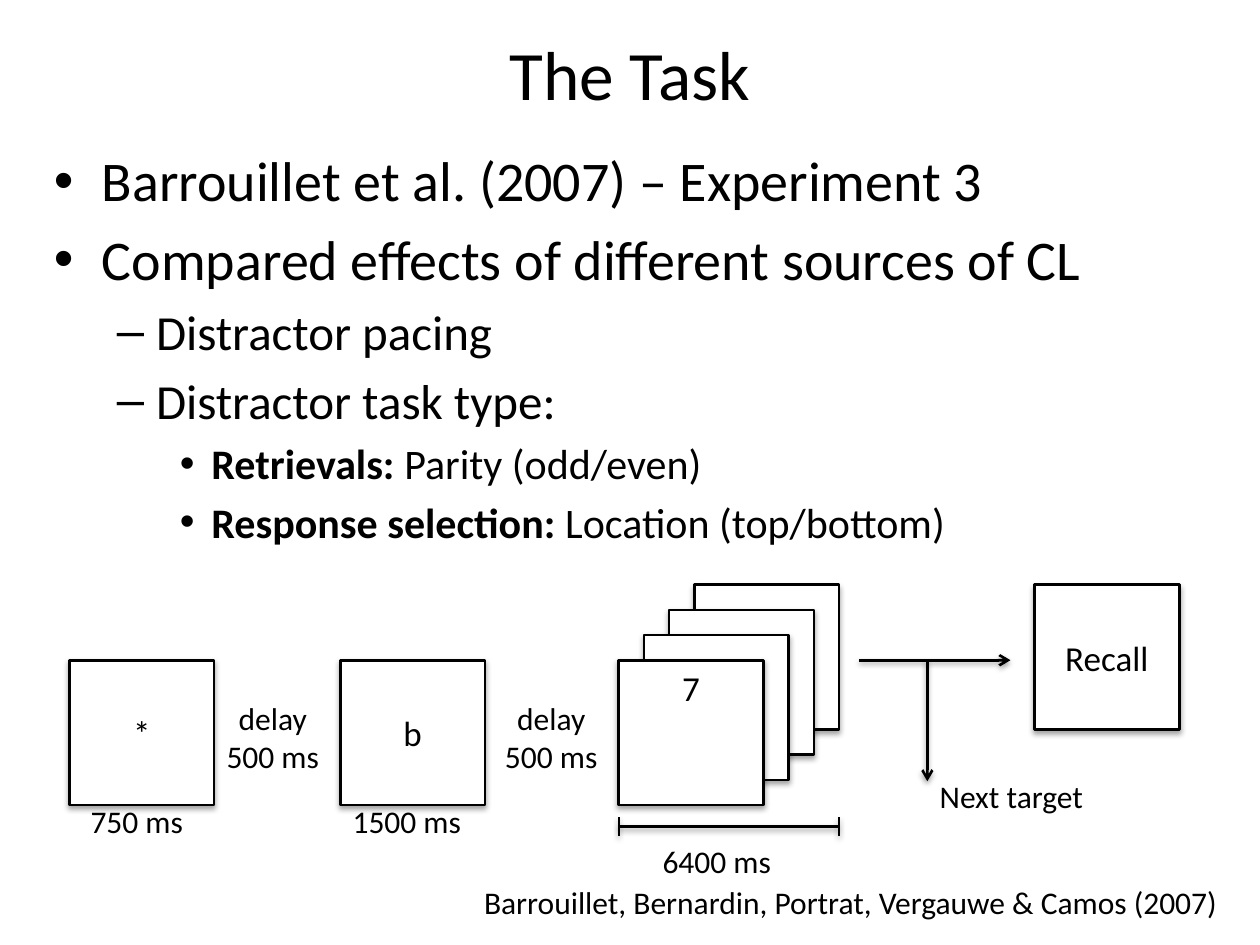
"""Build the slide that explains the distractor task."""

from dataclasses import dataclass

from lxml.etree import SubElement
from pptx import Presentation
from pptx.dml.color import RGBColor
from pptx.enum.shapes import MSO_CONNECTOR, MSO_SHAPE
from pptx.enum.text import MSO_ANCHOR, PP_ALIGN
from pptx.oxml.ns import qn
from pptx.shapes.autoshape import Shape
from pptx.slide import Slide
from pptx.text.text import TextFrame, _Paragraph
from pptx.util import Emu, Inches, Pt

COLUMNS, ROWS = 100, 75
WIDTH, HEIGHT = Inches(10), Inches(7.5)


@dataclass(frozen=True)
class Theme:
    """Colours, type sizes and line widths of the slide."""

    font: str = "Calibri"
    ink: RGBColor = RGBColor(0, 0, 0)
    paper: RGBColor = RGBColor(255, 255, 255)
    title: float = 39.6
    levels: tuple[int, ...] = (32, 28, 24)
    card: int = 20
    label: int = 18
    stroke: float = 1.5
    thin: float = 1


@dataclass(frozen=True)
class Level:
    """Bullet character and indents, in columns, of an outline level."""

    bullet: str
    margin: float
    hanging: float


@dataclass(frozen=True)
class Point:
    """One outline entry with an optional bold lead."""

    level: int
    text: str
    lead: str = ""


@dataclass(frozen=True)
class Card:
    """One screen of the task, placed by its top left corner."""

    column: float
    row: float
    text: str = ""
    anchor: MSO_ANCHOR = MSO_ANCHOR.MIDDLE


@dataclass(frozen=True)
class Label:
    """A text area on the grid."""

    column: float
    row: float
    columns: float
    rows: float
    lines: tuple[str, ...]
    size: float
    align: PP_ALIGN = PP_ALIGN.LEFT


@dataclass(frozen=True)
class Rule:
    """A straight line between two grid points."""

    start: tuple[float, float]
    end: tuple[float, float]
    width: float
    arrow: bool = False


THEME = Theme()
SIDE = 11.5
BASE_ROW = 52.4
STACK_COLUMN, STACK_STEP, STACK_SIZE = 49.1, 2, 4
STACK_TOP = BASE_ROW - STACK_STEP * (STACK_SIZE - 1)
STACK_END = STACK_COLUMN + SIDE + STACK_STEP * (STACK_SIZE - 1)
SPAN_ROW, TICK = 65.6, 0.75
BRANCH = 73.6

LEVELS = (Level("•", 3.8, 3.8), Level("–", 8.1, 3.1), Level("•", 12.5, 2.5))
POINTS = (
    Point(0, "Barrouillet et al. (2007) – Experiment 3"),
    Point(0, "Compared effects of different sources of CL"),
    Point(1, "Distractor pacing"),
    Point(1, "Distractor task type:"),
    Point(2, " Parity (odd/even)", "Retrievals:"),
    Point(2, "Location (top/bottom)", "Response selection: "),
)
CARDS = (
    Card(82.1, STACK_TOP, "Recall"),
    *(Card(STACK_COLUMN + STACK_STEP * depth, BASE_ROW - STACK_STEP * depth)
      for depth in range(STACK_SIZE - 1, 0, -1)),
    Card(STACK_COLUMN, BASE_ROW, "7", MSO_ANCHOR.TOP),
    Card(27, BASE_ROW, "b"),
    Card(5.5, BASE_ROW, "*"),
)
DELAY = ("delay", "500 ms")
LABELS = (
    Label(6, 2, 88, 8, ("The Task",), THEME.title, PP_ALIGN.CENTER),
    Label(6.2, 63.2, 10.1, 4, ("750 ms",), THEME.label),
    Label(27, 63.2, 11.5, 4, ("1500 ms",), THEME.label),
    Label(16.3, 55, 10.7, 7.1, DELAY, THEME.label, PP_ALIGN.CENTER),
    Label(38.4, 55, 10.7, 7.1, DELAY, THEME.label, PP_ALIGN.CENTER),
    Label(51.6, 66.3, 11.9, 4, ("6400 ms",), THEME.label),
    Label(BRANCH, 61.2, 14.5, 4, ("Next target",), THEME.label),
    Label(1.7, 69.6, 95.9, 4,
          ("Barrouillet, Bernardin, Portrat, Vergauwe & Camos (2007)",),
          THEME.label, PP_ALIGN.RIGHT),
)
RULES = (
    Rule((STACK_COLUMN, SPAN_ROW), (STACK_END, SPAN_ROW), THEME.stroke),
    *(Rule((column, SPAN_ROW + TICK), (column, SPAN_ROW - TICK), THEME.thin)
      for column in (STACK_COLUMN, STACK_END)),
    Rule((68.2, BASE_ROW), (80.2, BASE_ROW), THEME.stroke, arrow=True),
    Rule((BRANCH, BASE_ROW), (BRANCH, 62), THEME.stroke, arrow=True),
)


def across(columns: float) -> Emu:
    """Turn columns into a length."""
    return Emu(round(WIDTH * columns / COLUMNS))


def down(rows: float) -> Emu:
    """Turn rows into a length."""
    return Emu(round(HEIGHT * rows / ROWS))


def add_shadow(properties, opacity: int) -> None:
    """Give shape properties a soft shadow below."""
    effects = properties.find(qn("a:effectLst"))
    if effects is None:
        effects = SubElement(properties, qn("a:effectLst"))
    shadow = SubElement(effects, qn("a:outerShdw"), blurRad=str(Pt(3.1)),
                        dist=str(Pt(1.8)), dir="5400000", rotWithShape="0")
    color = SubElement(shadow, qn("a:srgbClr"), val=str(THEME.ink))
    SubElement(color, qn("a:alpha"), val=str(opacity * 1000))


def write(para: _Paragraph, text: str, *, size: float, bold: bool = False,
          align: PP_ALIGN = PP_ALIGN.LEFT) -> None:
    """Add a formatted span to a paragraph."""
    para.alignment = align
    span = para.add_run()
    span.text = text
    span.font.name = THEME.font
    span.font.size = Pt(size)
    span.font.bold = bold
    span.font.color.rgb = THEME.ink


def next_para(frame: TextFrame, index: int) -> _Paragraph:
    """Return the first paragraph, or add one after it."""
    return frame.add_paragraph() if index else frame.paragraphs[0]


def add_box(page: Slide, column: float, row: float, columns: float, rows: float) -> Shape:
    """Add a wrapping text box on the grid."""
    box = page.shapes.add_textbox(across(column), down(row), across(columns), down(rows))
    box.text_frame.word_wrap = True
    return box


def draw_outline(page: Slide, points: tuple[Point, ...]) -> None:
    """Draw the bulleted outline."""
    frame = add_box(page, 3.3, 11.1, 95.1, 35).text_frame
    for index, point in enumerate(points):
        para = next_para(frame, index)
        level, size = LEVELS[point.level], THEME.levels[point.level]
        para.level = point.level
        para.space_before = Pt(size * 0.2)
        if point.lead:
            write(para, point.lead, size=size, bold=True)
        write(para, point.text, size=size)
        properties = para._p.get_or_add_pPr()
        properties.set("marL", str(across(level.margin)))
        properties.set("indent", str(-across(level.hanging)))
        SubElement(properties, qn("a:buFont"), typeface="Arial")
        SubElement(properties, qn("a:buChar"), char=level.bullet)


def draw_card(page: Slide, card: Card) -> None:
    """Draw one screen of the task."""
    box = page.shapes.add_shape(MSO_SHAPE.RECTANGLE, across(card.column), down(card.row),
                                across(SIDE), down(SIDE))
    box.fill.solid()
    box.fill.fore_color.rgb = THEME.paper
    box.line.color.rgb = THEME.ink
    box.line.width = Pt(THEME.stroke)
    box.shadow.inherit = False
    add_shadow(box.element.spPr, 35)
    if card.text:
        box.text_frame.vertical_anchor = card.anchor
        write(box.text_frame.paragraphs[0], card.text, size=THEME.card, align=PP_ALIGN.CENTER)


def draw_label(page: Slide, label: Label) -> None:
    """Draw a plain text area."""
    frame = add_box(page, label.column, label.row, label.columns, label.rows).text_frame
    for index, line in enumerate(label.lines):
        write(next_para(frame, index), line, size=label.size, align=label.align)


def draw_rule(page: Slide, rule: Rule) -> None:
    """Draw a line, with an arrowhead when asked."""
    (left, top), (right, bottom) = rule.start, rule.end
    connector = page.shapes.add_connector(MSO_CONNECTOR.STRAIGHT, across(left), down(top),
                                          across(right), down(bottom))
    connector.line.color.rgb = THEME.ink
    connector.line.width = Pt(rule.width)
    properties = connector.element.spPr
    if rule.arrow:
        SubElement(properties.find(qn("a:ln")), qn("a:tailEnd"), type="arrow")
    add_shadow(properties, 38)


def main() -> None:
    """Build and save the deck."""
    deck = Presentation()
    deck.slide_width, deck.slide_height = WIDTH, HEIGHT
    page = deck.slides.add_slide(deck.slide_layouts[6])
    draw_outline(page, POINTS)
    for draw, items in ((draw_card, CARDS), (draw_label, LABELS), (draw_rule, RULES)):
        for item in items:
            draw(page, item)
    deck.save("out.pptx")


if __name__ == "__main__":
    main()
